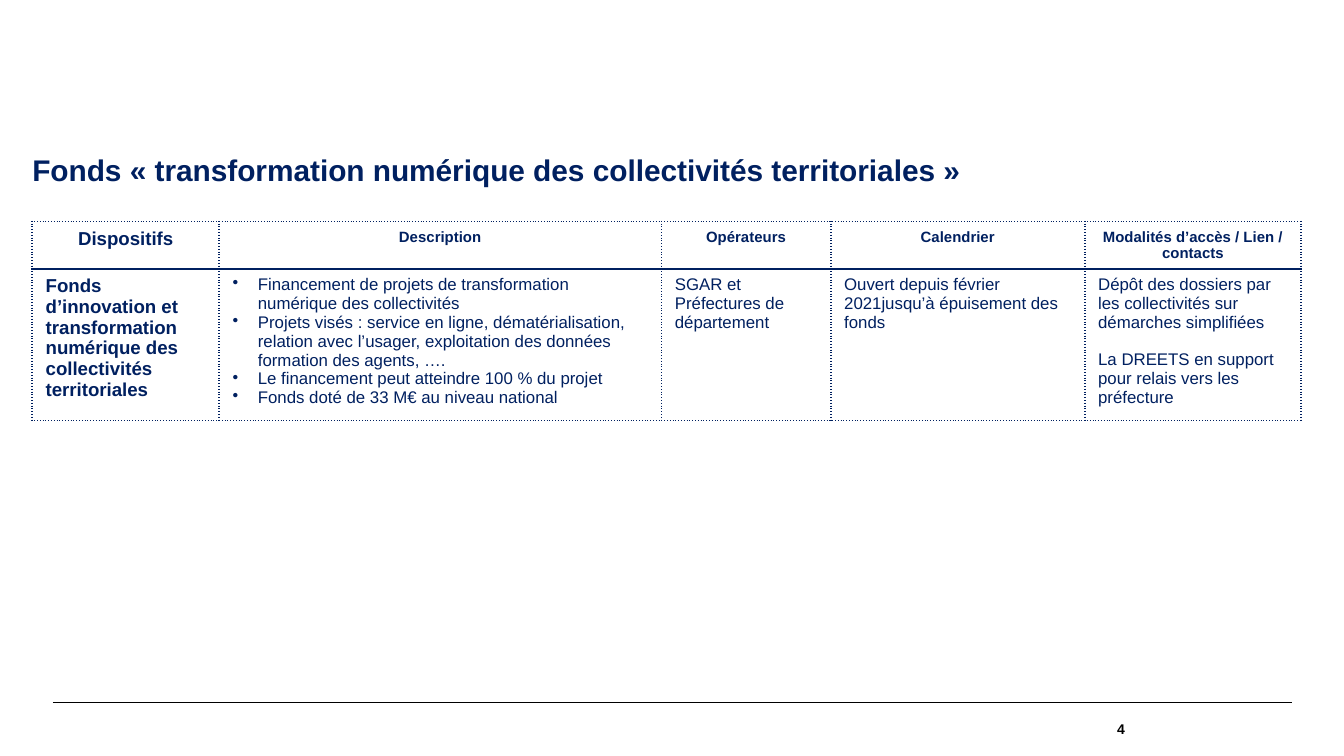
import pptx
import pptx.dml.color
import pptx.enum.shapes
import pptx.enum.text
import pptx.oxml
import pptx.oxml.ns
import pptx.util
from lxml import etree

Cm = pptx.util.Cm
Pt = pptx.util.Pt
ALIGN = pptx.enum.text.PP_ALIGN
ANCHOR = pptx.enum.text.MSO_ANCHOR
qn = pptx.oxml.ns.qn

COLOURS = {"navy": "002060", "black": "000000"}

TITLE = "Fonds « transformation numérique des collectivités territoriales »"
COLUMN_WIDTHS = [3.53, 8.36, 3.2, 4.8, 4.09]
ROW_HEIGHTS = [0.89, 2.87]
HEADINGS = ["Dispositifs", "Description", "Opérateurs", "Calendrier",
            "Modalités d’accès / Lien / contacts"]
FUND_NAME = ("Fonds d’innovation et transformation numérique "
             "des collectivités territoriales")
DESCRIPTION = [
    "Financement de projets de transformation numérique des collectivités",
    "Projets visés : service en ligne, dématérialisation, relation avec "
    "l’usager, exploitation des données formation des agents, ….",
    "Le financement peut atteindre 100 % du projet",
    "Fonds doté de 33 M€ au niveau national",
]
OPERATORS = ["SGAR et Préfectures de département"]
CALENDAR = ["Ouvert depuis février 2021jusqu’à épuisement des fonds"]
ACCESS = [
    "Dépôt des dossiers par les collectivités sur démarches simplifiées",
    "La DREETS en support pour relais vers les préfecture",
]


def rgb(name):
    return pptx.dml.color.RGBColor.from_string(COLOURS[name])


def set_all(target, values):
    for name, value in values.items():
        setattr(target, name, value)


def write_text(paragraph, text, size, bold=False, colour="navy", **layout):
    set_all(paragraph, layout)
    run = paragraph.add_run()
    run.text = text
    set_all(run.font, {"name": "Arial", "size": Pt(size), "bold": bold})
    run.font.color.rgb = rgb(colour)


def prepare_frame(frame, anchor):
    """Wrap the text, without margins or resizing."""
    set_all(frame, {
        "word_wrap": True, "vertical_anchor": anchor,
        "auto_size": pptx.enum.text.MSO_AUTO_SIZE.NONE,
        "margin_left": 0, "margin_right": 0,
        "margin_top": 0, "margin_bottom": 0,
    })


def add_bullet(paragraph):
    properties = paragraph._p.get_or_add_pPr()
    properties.set("marL", str(Cm(0.48)))
    properties.set("indent", str(-Cm(0.48)))
    etree.SubElement(properties, qn("a:buChar")).set("char", "•")


def set_border(cell, side, width, dash):
    border = etree.SubElement(cell._tc.get_or_add_tcPr(), qn(f"a:ln{side}"))
    border.set("w", str(Pt(width)))
    fill = etree.SubElement(border, qn("a:solidFill"))
    etree.SubElement(fill, qn("a:srgbClr")).set("val", COLOURS["navy"])
    etree.SubElement(border, qn("a:prstDash")).set("val", dash)


def format_cell(cell, is_header):
    """Dotted borders, with a solid rule between header and body."""
    ruled_side = "B" if is_header else "T"
    for side in "LRTB":
        width, dash = (1.5, "solid") if side == ruled_side else (1, "sysDot")
        set_border(cell, side, width, dash)
    cell.fill.background()


def fill_cell(cell, texts, size, bold=False, bullets=False, gap=0, **layout):
    frame = cell.text_frame
    for index, text in enumerate(texts):
        paragraph = frame.add_paragraph() if index else frame.paragraphs[0]
        if bullets:
            add_bullet(paragraph)
        if index and gap:
            paragraph.space_before = Pt(gap)
        write_text(paragraph, text, size, bold, **layout)


def add_title(slide):
    title = slide.shapes.title
    set_all(title, {"left": Cm(0.61), "top": Cm(2.95),
                    "width": Cm(24.41), "height": Cm(1.19)})
    prepare_frame(title.text_frame, ANCHOR.TOP)
    write_text(title.text_frame.paragraphs[0], TITLE, 16, bold=True,
               alignment=ALIGN.LEFT, line_spacing=0.9, space_after=Pt(12))


def add_fund_table(slide):
    table = slide.shapes.add_table(
        len(ROW_HEIGHTS), len(COLUMN_WIDTHS), Cm(0.61), Cm(4.19),
        Cm(sum(COLUMN_WIDTHS)), Cm(sum(ROW_HEIGHTS))).table
    table.horz_banding = False
    for column, width in zip(table.columns, COLUMN_WIDTHS):
        column.width = Cm(width)
    for index, (row, height) in enumerate(zip(table.rows, ROW_HEIGHTS)):
        row.height = Cm(height)
        for cell in row.cells:
            format_cell(cell, is_header=index == 0)

    for column, heading in enumerate(HEADINGS):
        fill_cell(table.cell(0, column), [heading], 8 if column else 10,
                  bold=True, alignment=ALIGN.CENTER)
    fund, description, operators, calendar, access = table.rows[1].cells
    fill_cell(fund, [FUND_NAME], 10, bold=True)
    fill_cell(description, DESCRIPTION, 9, bullets=True)
    fill_cell(operators, OPERATORS, 9)
    fill_cell(calendar, CALENDAR, 9)
    fill_cell(access, ACCESS, 9, gap=10)


def add_footer_rule(slide):
    rule = slide.shapes.add_connector(
        pptx.enum.shapes.MSO_CONNECTOR.STRAIGHT,
        Cm(1), Cm(13.28), Cm(24.41), Cm(13.28))
    rule.line.color.rgb = rgb("black")
    rule.line.width = Pt(0.8)
    etree.SubElement(rule._element.spPr, qn("a:effectLst"))


def add_page_number(slide):
    number = slide.shapes.add_textbox(Cm(17.5), Cm(13.28), Cm(3.76), Cm(1))
    prepare_frame(number.text_frame, ANCHOR.MIDDLE)
    write_text(number.text_frame.paragraphs[0], "4", 7.5, bold=True,
               colour="black", alignment=ALIGN.RIGHT)


def main():
    deck = pptx.Presentation()
    set_all(deck, {"slide_width": Cm(25.4), "slide_height": Cm(14.29)})
    slide = deck.slides.add_slide(deck.slide_layouts.get_by_name("Title Only"))
    add_footer_rule(slide)
    add_page_number(slide)
    add_title(slide)
    add_fund_table(slide)
    deck.save("out.pptx")


if __name__ == "__main__":
    main()
